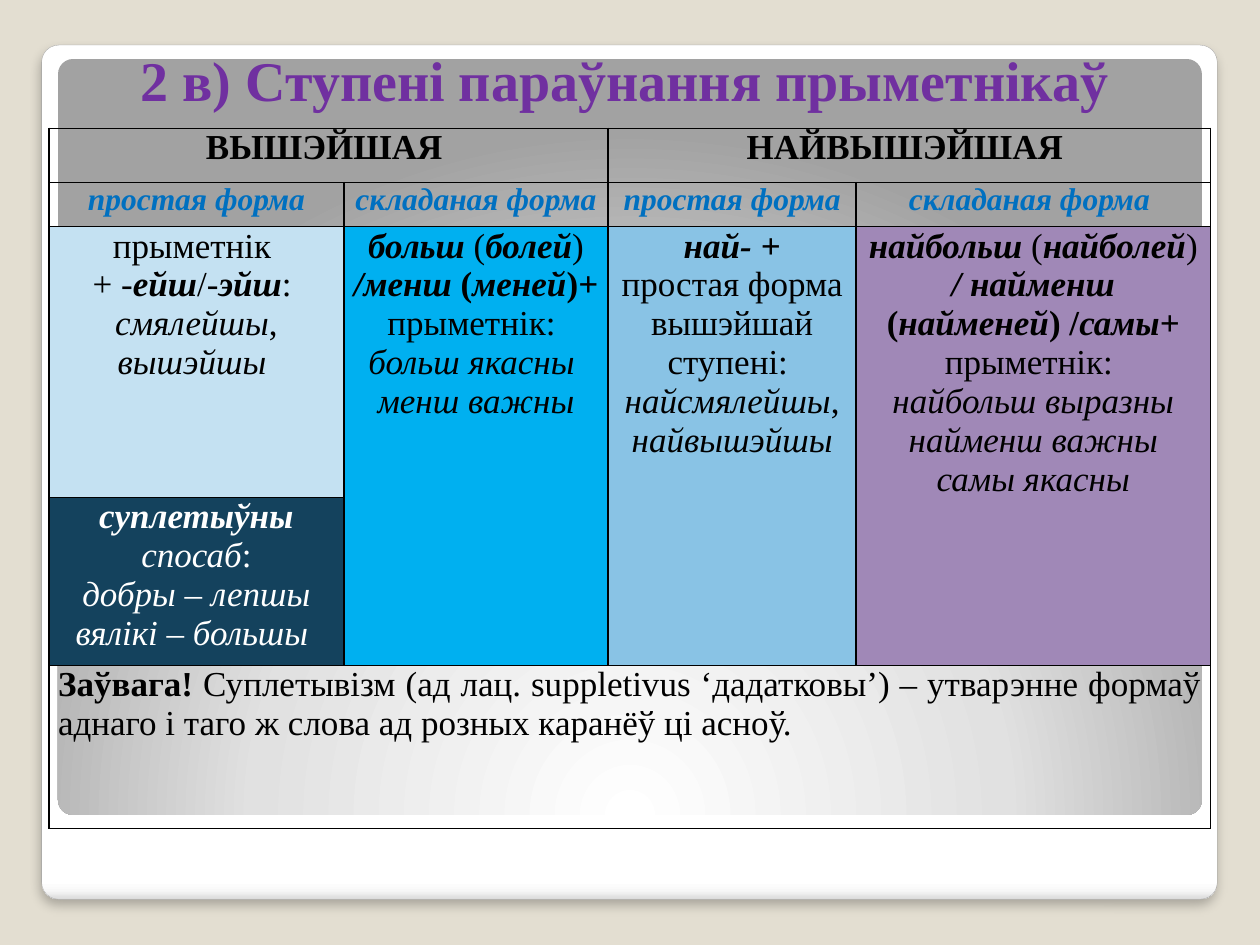
from pptx import Presentation
from pptx.dml.color import RGBColor as RGB
from pptx.enum.shapes import MSO_SHAPE as Form
from pptx.enum.text import MSO_ANCHOR as Anchor, MSO_AUTO_SIZE as Auto, PP_ALIGN as Align
from pptx.oxml import parse_xml
from pptx.oxml.ns import nsdecls, qn
from pptx.util import Cm, Pt

theme = {
    "font": "Times New Roman", "page": "E3DED1", "edge": "A4A4A4",
    "title": "7030A0", "ink": "000000", "form": "0070C0", "light": "FFFFFF",
    "pale": "C4E1F2", "cyan": "00B0F0", "sky": "89C3E5", "plum": "A088B7", "navy": "14425D",
    "big": 32, "body": 20, "small": 18,
    "panel": [(0, "FFFFFF"), (98, "FFFFFF"), (99, "F7F7F7"), (100, "DADADA")],
    "glow": [(0, "FFFFFF"), (55, "E1E1E1"), (100, "A2A2A2")],
}


def write(para, text, size, tint, align=Align.CENTER):
    para.alignment = align
    for part in text.split("|"):
        run = para.add_run()
        run.text = part[1:]
        look = {"name": theme["font"], "size": Pt(theme[size]),
                "bold": part[0] in "BX", "italic": part[0] in "IX"}
        for key, value in look.items():
            setattr(run.font, key, value)
        run.font.color.rgb = RGB.from_string(theme[tint])


def panel(box, stops, way):
    shape = slide.shapes.add_shape(Form.ROUNDED_RECTANGLE, *map(Cm, box))
    shape.adjustments[0] = 0.02
    shape.shadow.inherit = False
    shape.line.fill.background()
    shape.fill.gradient()
    marks = "".join(f'<a:gs pos="{at * 1000}"><a:srgbClr val="{tint}"/></a:gs>'
                    for at, tint in theme[stops])
    props = shape.element.spPr
    props.replace(props.find(qn("a:gradFill")), parse_xml(
        f'<a:gradFill {nsdecls("a")} rotWithShape="1"><a:gsLst>{marks}</a:gsLst>{way}</a:gradFill>'))
    return shape


deck = Presentation()
deck.slide_width, deck.slide_height = Cm(25.4), Cm(19.05)
slide = deck.slides.add_slide(deck.slide_layouts[5])
slide.background.fill.solid()
slide.background.fill.fore_color.rgb = RGB.from_string(theme["page"])

frame = panel((0.84, 0.91, 23.7, 17.22), "panel", '<a:lin ang="5400000" scaled="0"/>')
frame.line.color.rgb = RGB.from_string(theme["edge"])
frame.line.width = Pt(0.16)
frame.element.spPr.find(qn("a:effectLst")).append(parse_xml(
    f'<a:outerShdw {nsdecls("a")} blurRad="{Pt(6)}" dist="{Pt(4)}" dir="5400000">'
    '<a:srgbClr val="000000"><a:alpha val="25000"/></a:srgbClr></a:outerShdw>'))
panel((1.17, 1.19, 23.06, 15.24), "glow",
      '<a:path path="circle"><a:fillToRect l="50000" t="175000" r="50000" b="-75000"/></a:path>')

title = slide.shapes.title
slide.shapes.element.append(title.element)
place = {"left": 0.79, "top": 0.79, "width": 23.62, "height": 1.63}
for key, value in place.items():
    setattr(title, key, Cm(value))
setup = {"word_wrap": True, "auto_size": Auto.SHAPE_TO_FIT_TEXT, "vertical_anchor": Anchor.MIDDLE}
for key, value in setup.items():
    setattr(title.text_frame, key, value)
write(title.text_frame.paragraphs[0], "B2 в) Ступені параўнання прыметнікаў", "big", "title")

cols = [5.94, 5.33, 5, 7.14]
rows = [1.09, 0.89, 5.46, 3.38, 3.28]
grid = slide.shapes.add_table(len(rows), len(cols), Cm(0.99), Cm(2.59),
                              Cm(sum(cols)), Cm(sum(rows))).table
grid.first_row = grid.horz_banding = False
for col, wide in zip(grid.columns, cols):
    col.width = Cm(wide)
for row, high in zip(grid.rows, rows):
    row.height = Cm(high)

inset = {"margin_left": Cm(0.18), "margin_right": Cm(0.18), "margin_top": 0, "margin_bottom": 0}
for cell in grid.iter_cells():
    for key, value in inset.items():
        setattr(cell, key, value)
    cell.fill.background()
    props = cell._tc.get_or_add_tcPr()
    for spot, side in enumerate(("lnL", "lnR", "lnT", "lnB")):
        props.insert(spot, parse_xml(
            f'<a:{side} {nsdecls("a")} w="{Pt(1)}"><a:solidFill>'
            f'<a:srgbClr val="{theme["ink"]}"/></a:solidFill></a:{side}>'))

spans = [(0, 0, 0, 1), (0, 2, 0, 3), (2, 1, 3, 1), (2, 2, 3, 2), (2, 3, 3, 3), (4, 0, 4, 3)]
for top, left, low, right in spans:
    grid.cell(top, left).merge(grid.cell(low, right))

heads = [(0, 0, "BВЫШЭЙШАЯ ", "body", "ink"), (0, 2, "BНАЙВЫШЭЙШАЯ ", "body", "ink")]
forms = ["Xпростая форма", "Xскладаная форма "] * 2
heads += [(1, spot, text, "small", "form") for spot, text in enumerate(forms)]
for row, col, text, size, tint in heads:
    write(grid.cell(row, col).text_frame.paragraphs[0], text, size, tint)

# B bold, I italic, X both, N plain
blocks = [
    (2, 0, "pale", "ink", ["Nпрыметнік ", "N+ -|Xейш|N/-|Xэйш|N: ", "Iсмялейшы|N, |Iвышэйшы "]),
    (2, 1, "cyan", "ink", ["Xбольш|N (|Xболей|N)",
                           "X/менш |B(|Xменей|B)|X+ |Nпрыметнік: ",
                           "Iбольш якасны ", "Iменш важны"]),
    (2, 2, "sky", "ink", ["Xнай- +", "Nпростая форма вышэйшай ступені: ",
                          "Iнайсмялейшы|N,|I найвышэйшы"]),
    (2, 3, "plum", "ink", ["Xнайбольш |N(|Xнайболей|N)",
                           "X/ найменш |B(|Xнайменей|B) /|Xсамы+", "Nпрыметнік: ",
                           "Iнайбольш выразны", "Iнайменш важны", "Iсамы якасны"]),
    (3, 0, "navy", "light", ["Xсуплетыўны |Iспосаб|N:", "Iдобры – лепшы", "Iвялікі – большы "]),
]
for row, col, fill, tint, lines in blocks:
    cell = grid.cell(row, col)
    cell.fill.solid()
    cell.fill.fore_color.rgb = RGB.from_string(theme[fill])
    for spot, line in enumerate(lines):
        text = cell.text_frame
        write(text.add_paragraph() if spot else text.paragraphs[0], line, "body", tint)

write(grid.cell(4, 0).text_frame.paragraphs[0],
      "BЗаўвага!|N Суплетывізм (ад лац. suppletivus ‘дадатковы’) – утварэнне формаў "
      "аднаго і таго ж слова ад розных каранёў ці асноў.", "body", "ink", Align.JUSTIFY)

deck.save("out.pptx")
